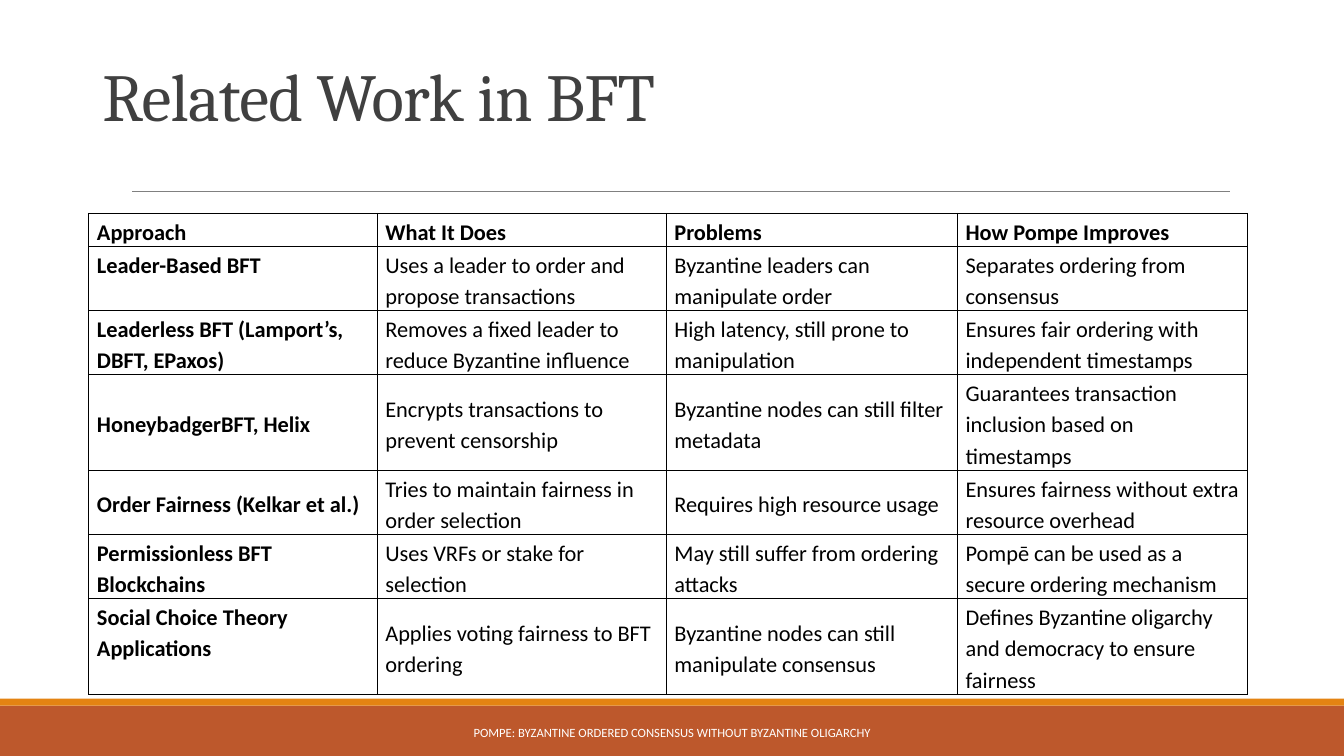
from lxml import etree
from pptx import Presentation
from pptx.dml.color import RGBColor
from pptx.enum.shapes import MSO_CONNECTOR, MSO_SHAPE
from pptx.enum.text import MSO_ANCHOR, PP_ALIGN
from pptx.oxml.ns import qn
from pptx.util import Pt

RECT = MSO_SHAPE.RECTANGLE
LINE = MSO_CONNECTOR.STRAIGHT
TOP, MIDDLE, BOTTOM = MSO_ANCHOR.TOP, MSO_ANCHOR.MIDDLE, MSO_ANCHOR.BOTTOM
LEFT, CENTER = PP_ALIGN.LEFT, PP_ALIGN.CENTER

WIDE, HIGH = 960, 540
COLORS = {
    "rust": "BD582C",
    "amber": "E48312",
    "rule": "808080",
    "title": "404040",
    "ink": "000000",
    "paper": "FFFFFF",
}
ROWS = [
    ("Approach", "What It Does", "Problems", "How Pompe Improves"),
    ("Leader-Based BFT", "Uses a leader to order and propose transactions",
     "Byzantine leaders can manipulate order", "Separates ordering from consensus"),
    ("Leaderless BFT (Lamport’s, DBFT, EPaxos)",
     "Removes a fixed leader to reduce Byzantine influence",
     "High latency, still prone to manipulation",
     "Ensures fair ordering with independent timestamps"),
    ("HoneybadgerBFT, Helix", "Encrypts transactions to prevent censorship",
     "Byzantine nodes can still filter metadata",
     "Guarantees transaction inclusion based on timestamps"),
    ("Order Fairness (Kelkar et al.)", "Tries to maintain fairness in order selection",
     "Requires high resource usage",
     "Ensures fairness without extra resource overhead"),
    ("Permissionless BFT Blockchains", "Uses VRFs or stake for selection",
     "May still suffer from ordering attacks",
     "Pompē can be used as a secure ordering mechanism"),
    ("Social Choice Theory Applications", "Applies voting fairness to BFT ordering",
     "Byzantine nodes can still manipulate consensus",
     "Defines Byzantine oligarchy and democracy to ensure fairness"),
]
COLS = [206, 206.5, 208, 207]
TALLS = [23.6, 45.7, 45.7, 68.6, 45.7, 45.7, 68.6]
HIGH_LABELS = {1, 2, 6}
PAD = {"margin_left": Pt(5.8), "margin_right": Pt(5.4),
       "margin_top": Pt(1), "margin_bottom": Pt(0)}


def rgb(name):
    return RGBColor.from_string(COLORS[name])


def apply(target, values):
    for name, value in values.items():
        setattr(target, name, value)


def write(frame, text, color, font, para):
    line = frame.paragraphs[0]
    run = line.add_run()
    run.text = text
    apply(line, para)
    apply(run.font, font)
    run.font.color.rgb = rgb(color)
    return run


def add_bar(slide, box, color):
    bar = slide.shapes.add_shape(RECT, *map(Pt, box))
    bar.shadow.inherit = False
    bar.fill.solid()
    bar.fill.fore_color.rgb = rgb(color)
    bar.line.fill.background()


def add_title(slide, box):
    left, top, width, height = box
    title = slide.shapes.title
    apply(title, {"left": Pt(left), "top": Pt(top),
                  "width": Pt(width), "height": Pt(height)})
    apply(title.text_frame, {"word_wrap": True, "vertical_anchor": BOTTOM})
    run = write(title.text_frame, "Related Work in BFT", "title",
                {"size": Pt(48), "name": "Cambria"},
                {"alignment": LEFT, "line_spacing": 0.85})
    run.font._element.set("spc", "-50")
    start = left + 28.5
    rule = slide.shapes.add_connector(
        LINE, Pt(start), Pt(top + 116.6), Pt(start + 784), Pt(top + 116.6))
    rule.line.color.rgb = rgb("rule")
    rule.line.width = Pt(0.5)
    etree.SubElement(rule._element.spPr, qn("a:effectLst"))


def add_edges(cell):
    props = cell._tc.get_or_add_tcPr()
    for place, side in enumerate(("lnL", "lnR", "lnT", "lnB")):
        edge = etree.Element(qn("a:" + side), w=str(Pt(1)))
        fill = etree.SubElement(edge, qn("a:solidFill"))
        etree.SubElement(fill, qn("a:srgbClr"), val=COLORS["ink"])
        props.insert(place, edge)


def add_grid(slide, box):
    table = slide.shapes.add_table(len(ROWS), len(COLS), *map(Pt, box)).table
    apply(table, {"first_row": False, "horz_banding": False})
    for column, width in zip(table.columns, COLS):
        column.width = Pt(width)
    for r, (row, texts) in enumerate(zip(table.rows, ROWS)):
        row.height = Pt(TALLS[r])
        for c, text in enumerate(texts):
            cell = table.cell(r, c)
            upper = r == 0 or (c == 0 and r in HIGH_LABELS)
            apply(cell, PAD)
            cell.vertical_anchor = TOP if upper else MIDDLE
            cell.fill.background()
            add_edges(cell)
            write(cell.text_frame, text, "ink",
                  {"size": Pt(16), "name": "Calibri", "bold": r == 0 or c == 0},
                  {"alignment": LEFT, "line_spacing": 1.15, "space_after": Pt(8)})


def add_foot(slide, box):
    left, top, width, height = box
    add_bar(slide, (left, top + 5, width, height - 5), "rust")
    add_bar(slide, (left, top, width, 5), "amber")
    place = (left + 290.2, top + 9.8, 379.5, 28.8)
    frame = slide.shapes.add_textbox(*map(Pt, place)).text_frame
    apply(frame, {"word_wrap": True, "vertical_anchor": MIDDLE})
    write(frame, "POMPE: BYZANTINE ORDERED CONSENSUS WITHOUT BYZANTINE OLIGARCHY",
          "paper", {"size": Pt(9), "name": "Calibri"}, {"alignment": CENTER})


def main():
    deck = Presentation()
    apply(deck, {"slide_width": Pt(WIDE), "slide_height": Pt(HIGH)})
    slide = deck.slides.add_slide(deck.slide_layouts[5])
    add_foot(slide, (0, 499, WIDE, 41))
    add_title(slide, (66, 20, 827, 80))
    add_grid(slide, (63.5, 152.5, sum(COLS), sum(TALLS)))
    deck.save("out.pptx")


if __name__ == "__main__":
    main()
